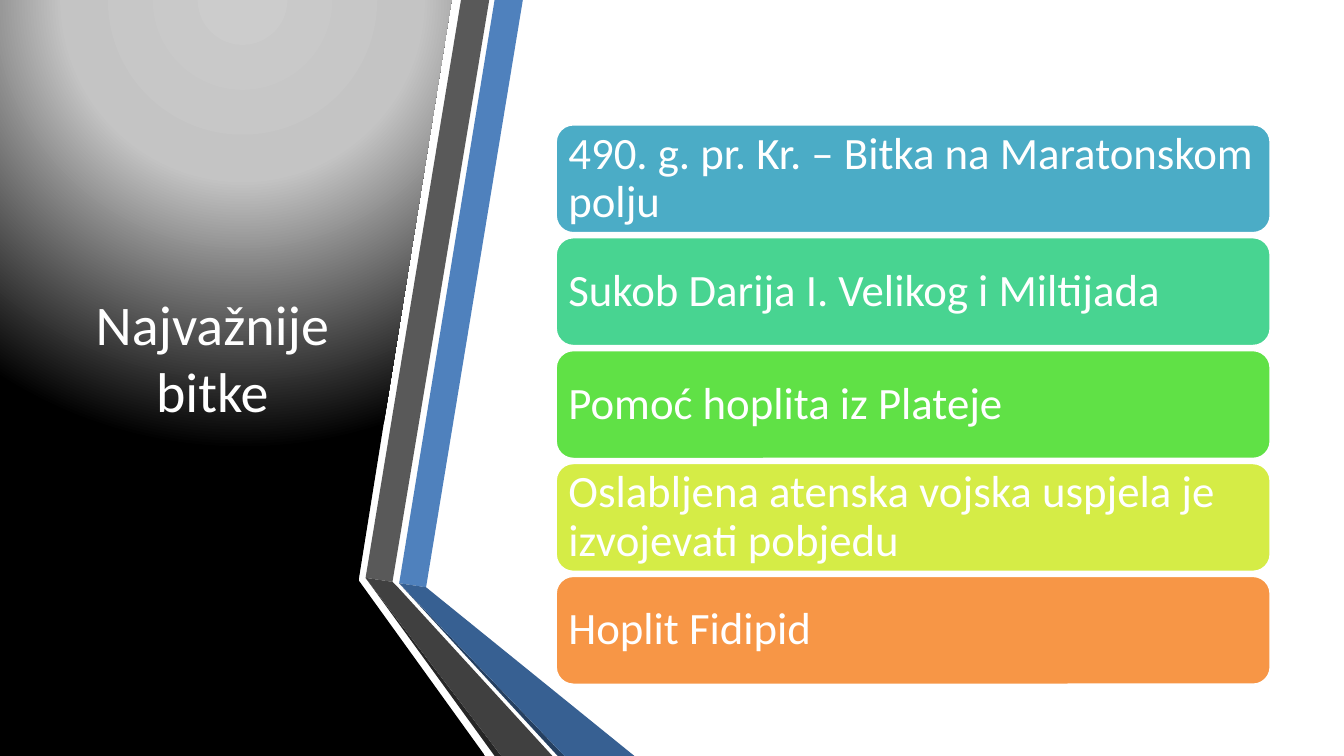
from lxml import etree
from pptx import Presentation
from pptx.dml.color import RGBColor
from pptx.enum.shapes import MSO_SHAPE as Shape
from pptx.enum.text import MSO_ANCHOR as Anchor, PP_ALIGN as Align
from pptx.oxml.ns import qn
from pptx.util import Inches, Pt

WIDE = 10
HIGH = WIDE * 9 / 16
FONT = "Calibri"
WHITE = RGBColor(0xFF, 0xFF, 0xFF)
BLACK = RGBColor(0x00, 0x00, 0x00)
SILVER = RGBColor(0xCC, 0xCC, 0xCC)
GREY = RGBColor(0xC4, 0xC4, 0xC4)
BLUE = RGBColor(0x4F, 0x81, 0xBD)
NAVY = RGBColor(0x25, 0x40, 0x61)
DEEP = RGBColor(0x37, 0x60, 0x92)
STONE = RGBColor(0x59, 0x59, 0x59)
COAL = RGBColor(0x26, 0x26, 0x26)
SLATE = RGBColor(0x40, 0x40, 0x40)
TEAL = RGBColor(0x4B, 0xAC, 0xC6)
MINT = RGBColor(0x48, 0xD4, 0x91)
GREEN = RGBColor(0x60, 0xE1, 0x46)
LIME = RGBColor(0xD5, 0xEC, 0x46)
ORANGE = RGBColor(0xF7, 0x96, 0x46)

PANEL = [(0, 0), (2.64, 0), (3.36, 0), (2.67, 4.31), (2.67, 4.32),
         (3.61, HIGH), (0, HIGH)]
GLOW = [(0, SILVER), (40, GREY), (100, BLACK)]

RIBBONS = [
    (BLUE, [(2.97, 4.34), (3.17, 4.37), (3.89, 0), (3.68, 0)]),
    (STONE, [(3.64, 0), (3.43, 0), (2.72, 4.3), (2.92, 4.33)]),
    (COAL, [(2.72, 4.3), (3.68, HIGH), (3.73, HIGH)]),
    (NAVY, [(2.97, 4.34), (4.15, HIGH), (4.2, HIGH)]),
    (DEEP, [(2.97, 4.34), (4.2, HIGH), (4.72, HIGH), (3.17, 4.37)]),
    (SLATE, [(4.11, HIGH), (2.96, 4.37), (2.92, 4.33), (2.72, 4.3),
             (3.73, HIGH)]),
]

BARS = [
    ("490. g. pr. Kr. – Bitka na Maratonskom polju", TEAL),
    ("Sukob Darija I. Velikog i Miltijada", MINT),
    ("Pomoć hoplita iz Plateje", GREEN),
    ("Oslabljena atenska vojska uspjela je izvojevati pobjedu", LIME),
    ("Hoplit Fidipid", ORANGE),
]
LEFT, TOP, WIDTH, HEIGHT, STEP = 4.13, 0.92, 5.33, 0.82, 0.84


def paint(shape, color):
    shape.shadow.inherit = False
    shape.fill.solid()
    shape.fill.fore_color.rgb = color


def add_free(slide, points, color):
    spots = [(Inches(x), Inches(y)) for x, y in points]
    pen = slide.shapes.build_freeform(*spots[0], scale=1.0)
    pen.add_line_segments(spots[1:], close=True)
    shape = pen.convert_to_shape()
    paint(shape, color)
    shape.line.fill.background()
    return shape


def set_glow(shape, stops):
    """Fill the shape with a round gradient centred above its top edge."""
    shape.fill.gradient()
    grad = shape._element.spPr.find(qn("a:gradFill"))
    for child in list(grad):
        grad.remove(child)
    row = etree.SubElement(grad, qn("a:gsLst"))
    for part, color in stops:
        stop = etree.SubElement(row, qn("a:gs"), pos=str(part * 1000))
        etree.SubElement(stop, qn("a:srgbClr"), val=str(color))
    ring = etree.SubElement(grad, qn("a:path"))
    ring.set("path", "circle")
    etree.SubElement(ring, qn("a:fillToRect"),
                     l="50000", t="-80000", r="50000", b="180000")


def write(shape, text, size, align):
    frame = shape.text_frame
    frame.word_wrap = True
    frame.vertical_anchor = Anchor.MIDDLE
    para = frame.paragraphs[0]
    para.alignment = align
    run = para.add_run()
    run.text = text
    run.font.name = FONT
    run.font.size = Pt(size)
    run.font.color.rgb = WHITE
    return frame


def add_title(slide, text):
    box = slide.shapes.add_textbox(Inches(0.44), Inches(0.56),
                                   Inches(2.28), Inches(4.19))
    write(box, text, 30, Align.CENTER)


def add_bar(slide, top, text, color):
    bar = slide.shapes.add_shape(Shape.ROUNDED_RECTANGLE, Inches(LEFT),
                                 Inches(top), Inches(WIDTH), Inches(HEIGHT))
    paint(bar, color)
    bar.line.color.rgb = WHITE
    bar.line.width = Pt(2)
    frame = write(bar, text, 24, Align.LEFT)
    frame.margin_left = frame.margin_right = Inches(0.06)
    frame.margin_top = frame.margin_bottom = Inches(0.06)
    frame.paragraphs[0].line_spacing = 0.9


def main():
    deck = Presentation()
    deck.slide_width, deck.slide_height = Inches(WIDE), Inches(HIGH)
    slide = deck.slides.add_slide(deck.slide_layouts[6])
    set_glow(add_free(slide, PANEL, BLACK), GLOW)
    for color, points in RIBBONS:
        add_free(slide, points, color)
    add_title(slide, "Najvažnije bitke")
    for row, (text, color) in enumerate(BARS):
        add_bar(slide, TOP + row * STEP, text, color)
    deck.save("out.pptx")


if __name__ == "__main__":
    main()
